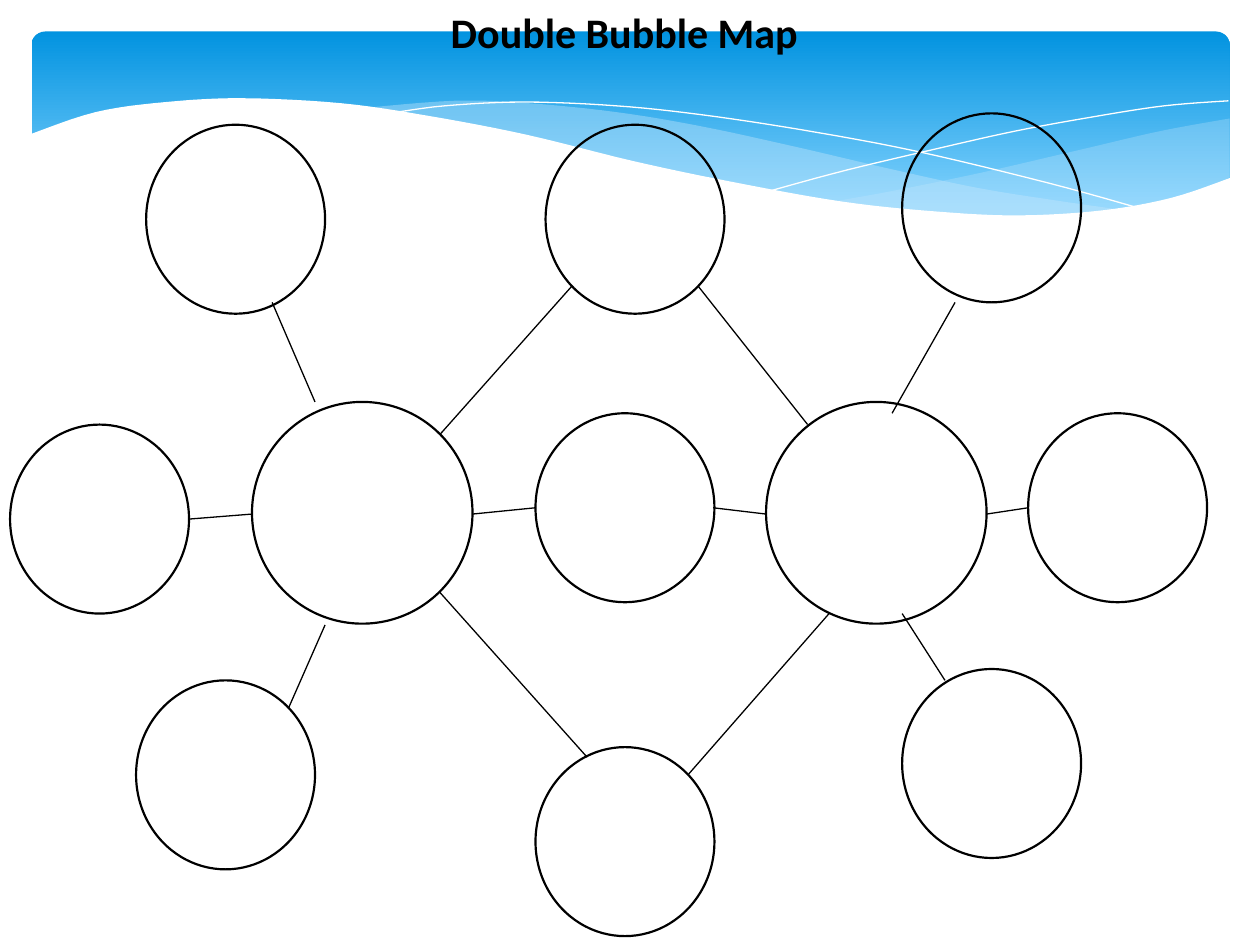
from lxml import etree
from pptx import Presentation
from pptx.dml.color import RGBColor
from pptx.enum.shapes import MSO_CONNECTOR, MSO_SHAPE
from pptx.enum.text import MSO_ANCHOR, MSO_AUTO_SIZE, PP_ALIGN
from pptx.oxml.ns import qn
from pptx.util import Inches, Pt

ELLIPSE, ROUNDED = MSO_SHAPE.OVAL, MSO_SHAPE.ROUNDED_RECTANGLE
STRAIGHT = MSO_CONNECTOR.STRAIGHT
TOP, CENTER, NO_FIT = MSO_ANCHOR.TOP, PP_ALIGN.CENTER, MSO_AUTO_SIZE.NONE

BLACK = RGBColor(0x00, 0x00, 0x00)
WHITE = RGBColor(0xFF, 0xFF, 0xFF)
DEEP_BLUE = RGBColor(0x02, 0x93, 0xE0)
SKY_BLUE = RGBColor(0x83, 0xD3, 0xFE)
PALE_BLUE = RGBColor(0xC6, 0xE7, 0xFC)

TITLE_FONT = {"name": "Calibri", "size": Pt(24), "bold": True}
TITLE_FRAME = {"word_wrap": True, "auto_size": NO_FIT, "vertical_anchor": TOP}

RIGHT_WAVE = [
    [(9.76, 0.94), (9.21, 1.04), (8.61, 1.18), (7.79, 1.37), (7.06, 1.52), (6.61, 1.6)],
    [(6.61, 1.6), (7.19, 1.67), (7.81, 1.72), (8.35, 1.72), (8.89, 1.66),
     (9.35, 1.56), (9.76, 1.41)],
]
MIDDLE_WAVE = [
    [(8.93, 1.67), (8.37, 1.59), (7.75, 1.49), (7.06, 1.34), (6.29, 1.16),
     (5.55, 1), (4.89, 0.89), (4.2, 0.82), (3.61, 0.8), (2.86, 0.86)],
    [(2.86, 0.86), (3.62, 0.97), (4.49, 1.16), (5.3, 1.35), (6.01, 1.5),
     (6.65, 1.61), (7.36, 1.69), (8.07, 1.73), (8.57, 1.71), (8.93, 1.67)],
]
FALLING_LINE = [
    [(3.09, 0.9), (3.53, 0.84), (4.16, 0.81), (4.89, 0.84), (5.56, 0.91),
     (6.36, 1.03), (7.27, 1.2), (8.31, 1.45), (9.07, 1.66)],
]
RISING_LINE = [
    [(6.13, 1.51), (6.72, 1.35), (7.48, 1.17), (8.06, 1.04), (8.66, 0.93),
     (9.24, 0.84), (9.75, 0.8)],
]
WHITE_WAVE = [
    [(9.77, 1.41), (9.3, 1.57), (8.75, 1.67), (8.09, 1.71), (7.44, 1.68),
     (6.68, 1.6), (5.79, 1.44), (5.03, 1.28), (4.18, 1.07), (3.4, 0.92),
     (2.71, 0.82), (1.93, 0.78), (1.32, 0.81), (0.76, 0.89), (0.23, 1.07)],
    [(0.23, 1.07), (0.23, 2.24)],
    [(0.23, 2.24), (9.77, 2.24)],
]

HUB_SIZE, BUBBLE_SIZE = (1.75, 1.76), (1.42, 1.5)
HUBS = [(2, 3.19), (6.08, 3.19)]
SHARED_BUBBLES = [(4.33, 0.99), (4.25, 3.28), (4.25, 5.93)]
LEFT_BUBBLES = [(1.16, 0.99), (0.08, 3.37), (1.08, 5.4)]
RIGHT_BUBBLES = [(7.16, 0.9), (8.16, 3.28), (7.16, 5.31)]
LINKS = [
    (3.49, 3.45, 4.54, 2.27), (3.75, 4.08, 4.25, 4.03), (3.49, 4.7, 4.66, 6.01),
    (2.5, 3.19, 2.16, 2.4), (2, 4.08, 1.5, 4.12), (2.58, 4.96, 2.29, 5.62),
    (6.41, 3.37, 5.54, 2.27), (5.66, 4.03, 6.08, 4.08), (6.58, 4.87, 5.46, 6.15),
    (7.08, 3.28, 7.58, 2.4), (7.83, 4.08, 8.16, 4.03), (7.16, 4.87, 7.5, 5.4),
]


def smooth_edge(knots, steps=6):
    """Return points on a Catmull-Rom curve through the knots."""
    ends = [knots[0], *knots, knots[-1]]
    points = [knots[0]]
    for a, b, c, d in zip(ends, ends[1:], ends[2:], ends[3:]):
        for i in range(1, steps + 1):
            t = i / steps
            points.append(tuple(
                (2 * q + (r - p) * t + (2 * p - 5 * q + 4 * r - s) * t ** 2
                 + (3 * q - p - 3 * r + s) * t ** 3) / 2
                for p, q, r, s in zip(a, b, c, d)))
    return points


def add_curve(s, left, top, edges, color, opacity=100, closed=True):
    """Draw a filled wave, or a hairline if it is not closed."""
    points = [(left + Inches(x), top + Inches(y))
              for edge in edges for x, y in smooth_edge(edge)]
    builder = s.shapes.build_freeform(*points[0], scale=1.0)
    builder.add_line_segments(points[1:], close=closed)
    sp = builder.convert_to_shape()
    sp.shadow.inherit = False
    if not closed:
        sp.fill.background()
        sp.line.color.rgb = color
        sp.line.width = Pt(0)
        return
    sp.line.fill.background()
    sp.fill.solid()
    sp.fill.fore_color.rgb = color
    if opacity < 100:
        srgb = next(sp.element.spPr.iter(qn("a:srgbClr")))
        etree.SubElement(srgb, qn("a:alpha"), val=str(opacity * 1000))


def add_banner(s, left, top):
    """Draw the blue gradient banner with its waves."""
    sp = s.shapes.add_shape(ROUNDED, left + Inches(0.25), top + Inches(0.25),
                            Inches(9.51), Inches(1.56))
    sp.adjustments[0] = 0.07
    sp.shadow.inherit = False
    sp.line.fill.background()
    sp.fill.gradient()
    sp.fill.gradient_angle = 270
    stops = [(0, DEEP_BLUE), (0.9, SKY_BLUE)]
    for stop, (position, color) in zip(sp.fill.gradient_stops, stops):
        stop.position = position
        stop.color.rgb = color
    add_curve(s, left, top, RIGHT_WAVE, PALE_BLUE, opacity=29)
    add_curve(s, left, top, MIDDLE_WAVE, PALE_BLUE, opacity=40)
    for edges in (FALLING_LINE, RISING_LINE):
        add_curve(s, left, top, edges, WHITE, closed=False)
    add_curve(s, left, top, WHITE_WAVE, WHITE)


def add_bubble(s, left, top, width, height):
    """Draw one empty outlined bubble."""
    sp = s.shapes.add_shape(ELLIPSE, left, top, width, height)
    sp.shadow.inherit = False
    sp.fill.background()
    sp.line.color.rgb = BLACK
    sp.line.width = Pt(1.25)


def add_link(s, x1, y1, x2, y2):
    """Draw one thin line between two bubbles."""
    line = s.shapes.add_connector(STRAIGHT, x1, y1, x2, y2)
    line.line.color.rgb = BLACK
    line.line.width = Pt(0.75)
    etree.SubElement(line.element.spPr, qn("a:effectLst"))


def add_bubble_map(s, left, top):
    """Draw the two hubs, their bubbles and the links."""
    groups = [(HUBS, HUB_SIZE),
              (SHARED_BUBBLES + LEFT_BUBBLES + RIGHT_BUBBLES, BUBBLE_SIZE)]
    for places, (width, height) in groups:
        for x, y in places:
            add_bubble(s, left + Inches(x), top + Inches(y),
                       Inches(width), Inches(height))
    for x1, y1, x2, y2 in LINKS:
        add_link(s, left + Inches(x1), top + Inches(y1),
                 left + Inches(x2), top + Inches(y2))


def add_title(s, left, top, width, height):
    """Place the title in front of the banner."""
    sp = s.shapes.title
    box = {"left": left, "top": top, "width": width, "height": height}
    for name, value in box.items():
        setattr(sp, name, value)
    s.shapes.element.append(sp.element)
    tf = sp.text_frame
    for name, value in TITLE_FRAME.items():
        setattr(tf, name, value)
    p = tf.paragraphs[0]
    p.alignment = CENTER
    r = p.add_run()
    r.text = "Double Bubble Map"
    for name, value in TITLE_FONT.items():
        setattr(r.font, name, value)
    r.font.color.rgb = BLACK


def main():
    """Build the slide and save it."""
    prs = Presentation()
    prs.slide_width, prs.slide_height = Inches(10), Inches(7.5)
    s = prs.slides.add_slide(prs.slide_layouts[5])
    add_banner(s, Inches(0), Inches(0))
    add_bubble_map(s, Inches(0), Inches(0))
    add_title(s, Inches(2.58), Inches(0), Inches(4.75), Inches(1.07))
    prs.save("out.pptx")


if __name__ == "__main__":
    main()
